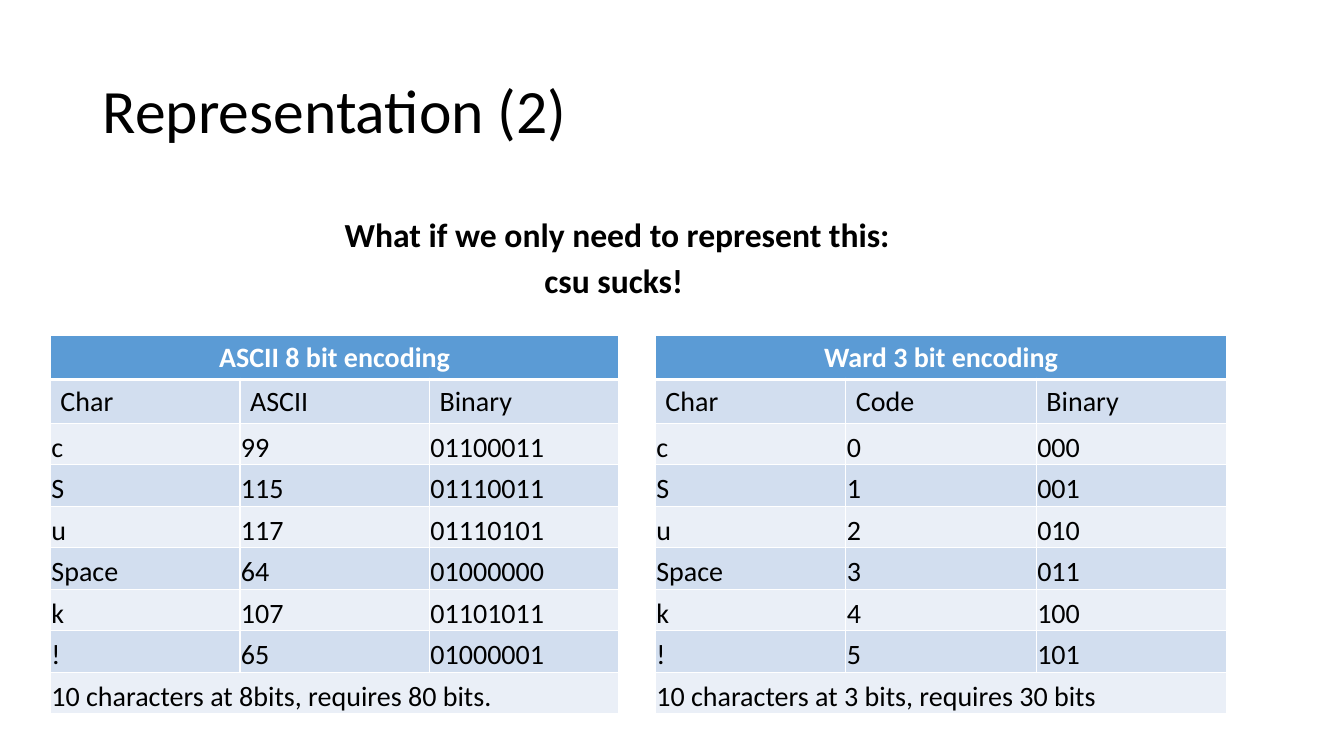
from dataclasses import dataclass

from lxml.etree import SubElement
from pptx import Presentation
from pptx.dml.color import RGBColor as RGB
from pptx.enum.text import MSO_ANCHOR as Anchor, MSO_AUTO_SIZE as Fit, PP_ALIGN as Align
from pptx.oxml.ns import qn
from pptx.util import Inches, Pt


@dataclass(frozen=True)
class Theme:
    font: str = "Calibri"
    ink: str = "000000"
    white: str = "FFFFFF"
    head: str = "5B9BD5"
    bands: tuple = ("EAEFF7", "D2DEEF")
    title: int = 44
    body: int = 24
    cell: int = 20


def put(par, text, *, theme, size, color=None, bold=False, align=Align.LEFT,
        lead=None, before=0, indent=0):
    """Write text into a paragraph; indent is in inches, before in points."""
    par.alignment = align
    par.space_before = Pt(before)
    if lead:
        par.line_spacing = lead
    if indent:
        props = par._p.get_or_add_pPr()
        props.set("marL", str(Inches(indent)))
        props.set("indent", "0")
    run = par.add_run()
    run.text = text
    font = run.font
    font.name, font.size, font.bold = theme.font, Pt(size), bold
    font.color.rgb = RGB.from_string(color or theme.ink)


def edge(cell, color, base=1):
    """Draw the four cell borders; base is the width of the bottom one."""
    props = cell._tc.get_or_add_tcPr()
    for side, width in (("L", 1), ("R", 1), ("T", 1), ("B", base)):
        line = SubElement(props, qn(f"a:ln{side}"), w=str(Pt(width)))
        fill = SubElement(line, qn("a:solidFill"))
        SubElement(fill, qn("a:srgbClr"), val=color)


class Deck:
    """Boxes are left, top, width and height in percent of the slide."""

    def __init__(self, theme):
        self.theme = theme
        self.file = Presentation()
        self.file.slide_width, self.file.slide_height = Inches(13.33), Inches(7.5)
        self.slide = self.file.slides.add_slide(self.file.slide_layouts[5])

    def place(self, box):
        wide, high = self.file.slide_width, self.file.slide_height
        return [int(part * full / 100) for part, full in zip(box, (wide, high) * 2)]

    def title(self, text, box):
        shape = self.slide.shapes.title
        shape.left, shape.top, shape.width, shape.height = self.place(box)
        frame = shape.text_frame
        frame.auto_size, frame.vertical_anchor = Fit.NONE, Anchor.MIDDLE
        put(frame.paragraphs[0], text, theme=self.theme, size=self.theme.title, lead=0.9)

    def body(self, lines, box):
        """Add bold lines, each given as text and left indent."""
        frame = self.slide.shapes.add_textbox(*self.place(box)).text_frame
        frame.word_wrap, frame.vertical_anchor = True, Anchor.BOTTOM
        for i, (text, indent) in enumerate(lines):
            par = frame.add_paragraph() if i else frame.paragraphs[0]
            put(par, text, theme=self.theme, size=self.theme.body, bold=True,
                lead=0.8, before=10, indent=indent)

    def table(self, rows, box):
        """Add a banded table; a row with one text spans all columns."""
        theme, cols = self.theme, max(map(len, rows))
        grid = self.slide.shapes.add_table(len(rows), cols, *self.place(box)).table
        for r, row in enumerate(rows):
            head = r == 0
            if len(row) == 1:
                grid.cell(r, 0).merge(grid.cell(r, cols - 1))
            for c in range(cols):
                cell = grid.cell(r, c)
                edge(cell, theme.white, 3 if head else 1)
                cell.fill.solid()
                color = theme.head if head else theme.bands[r % 2]
                cell.fill.fore_color.rgb = RGB.from_string(color)
                if r > 1:
                    cell.vertical_anchor = Anchor.BOTTOM
                    cell.margin_left = cell.margin_right = cell.margin_top = Inches(0.01)
                    cell.margin_bottom = 0
                if c < len(row):
                    put(cell.text_frame.paragraphs[0], row[c], theme=theme,
                        size=theme.cell, bold=head,
                        color=theme.white if head else theme.ink,
                        align=Align.CENTER if head else Align.LEFT)


CHARS = ("c", "S", "u", "Space", "k", "!")
ASCII = (99, 115, 117, 64, 107, 65)


def code(name, label, codes, bits, total):
    """Build the rows of one encoding table."""
    return [(name,), ("Char", label, "Binary"),
            *((char, str(n), f"{n:0{bits}b}") for char, n in zip(CHARS, codes)),
            (total,)]


def main():
    deck = Deck(Theme())
    deck.title("Representation (2)", (6.9, 5.33, 86.27, 19.33))
    deck.body([("What if we only need to represent this:", 0), ("csu sucks!", 1.98)],
              (24.91, 28.4, 42.31, 12))
    top, high = 44.4, 49.47
    deck.table(code("ASCII 8 bit encoding", "ASCII", ASCII, 8,
                    "10 characters at 8bits, requires 80 bits."),
               (3.75, top, 42.31, high))
    deck.table(code("Ward 3 bit encoding", "Code", range(len(CHARS)), 3,
                    "10 characters at 3 bits, requires 30 bits"),
               (48.76, top, 42.53, high))
    deck.file.save("out.pptx")


if __name__ == "__main__":
    main()
